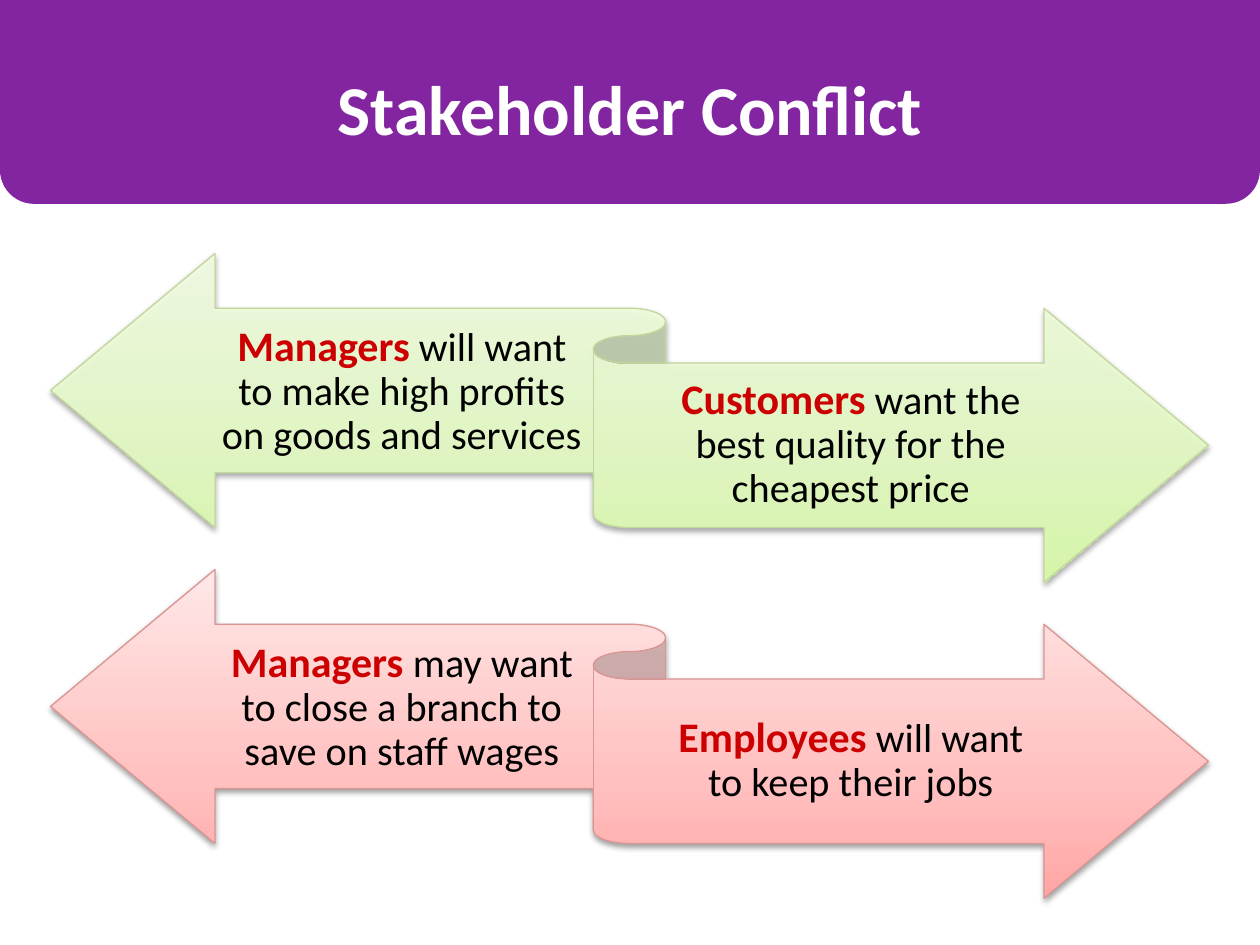
from lxml.etree import SubElement
from pptx import Presentation
from pptx.dml.color import RGBColor
from pptx.enum.shapes import MSO_SHAPE as Shape
from pptx.enum.text import MSO_ANCHOR as Anchor, MSO_AUTO_SIZE as AutoSize, PP_ALIGN as Align
from pptx.oxml.ns import qn
from pptx.util import Cm, Pt

PURPLE, WHITE, RED, BLACK = "8325A1", "FFFFFF", "CC0000", "000000"
GREEN_STOPS = [(0, "DAFDA7"), (35, "E4FCC2"), (100, "F5FFE7")]
PINK_STOPS = [(0, "FFA6A5"), (35, "FFC0BF"), (100, "FFE7E7")]
SLIDE_W, SLIDE_H = 25.4, 19.05


def rgb(color):
    return RGBColor.from_string(color)


def add_color(parent, color, alpha):
    clr = SubElement(parent, qn("a:srgbClr"), val=color)
    if alpha < 100:
        SubElement(clr, qn("a:alpha"), val=str(alpha * 1000))


def add_shape(slide, kind, box):
    s = slide.shapes.add_shape(kind, *map(Cm, box))
    s.shadow.inherit = False
    return s


def add_text(slide, box, runs, frame_format, line_spacing=None):
    """Add a centred paragraph; runs hold text, size, colour and bold."""
    tf = slide.shapes.add_textbox(*map(Cm, box)).text_frame
    for name, value in frame_format.items():
        setattr(tf, name, value)
    p = tf.paragraphs[0]
    p.alignment = Align.CENTER
    p.line_spacing = line_spacing
    for text, size, color, bold in runs:
        r = p.add_run()
        r.text = text
        for name, value in {"name": "Calibri", "size": Pt(size), "bold": bold}.items():
            setattr(r.font, name, value)
        r.font.color.rgb = rgb(color)


def set_gradient(s, stops, alpha):
    """Fill from bottom to top with the given stops."""
    s.fill.gradient()
    s.fill.gradient_angle = 90
    stop_list = s.element.spPr.find(".//" + qn("a:gsLst"))
    stop_list.clear()
    for position, color in stops:
        stop = SubElement(stop_list, qn("a:gs"), pos=str(position * 1000))
        add_color(stop, color, alpha)


def add_soft_shadow(s):
    effects = s.element.spPr.find(qn("a:effectLst"))
    shadow = SubElement(effects, qn("a:outerShdw"), blurRad=str(Pt(3.1)),
                        dist=str(Pt(1.6)), dir="5400000", rotWithShape="0")
    add_color(shadow, BLACK, 38)


def add_header(slide, title):
    for kind, height in ((Shape.ROUNDED_RECTANGLE, 4.11), (Shape.RECTANGLE, 2.92)):
        s = add_shape(slide, kind, (0, 0, SLIDE_W, height))
        s.fill.solid()
        s.fill.fore_color.rgb = rgb(PURPLE)
        s.line.fill.background()
    add_text(slide, (0, 1.19, SLIDE_W, 1.96), [(title, 40, WHITE, True)],
             {"word_wrap": True, "auto_size": AutoSize.SHAPE_TO_FIT_TEXT})


def add_conflict(slide, top, stops, alpha, line_color, left_side, right_side):
    """Add a two-way ribbon with one stakeholder's wish on each side."""
    s = add_shape(slide, Shape.LEFT_RIGHT_RIBBON, (1.02, top, 23.34, 6.63))
    set_gradient(s, stops, alpha)
    s.line.color.rgb = rgb(line_color)
    s.line.width = Pt(0.75)
    add_soft_shadow(s)
    frame_format = {"word_wrap": True, "vertical_anchor": Anchor.MIDDLE,
                    "margin_left": 0, "margin_right": 0,
                    "margin_top": Cm(0.23), "margin_bottom": Cm(0.25)}
    places = ((4.42, 1.17, 7.37), (13.28, 2.24, 7.75))
    for (left, drop, width), (who, wish) in zip(places, (left_side, right_side)):
        runs = [(who, 24, RED, True), (wish, 23, BLACK, False)]
        add_text(slide, (left, top + drop, width, 3.25), runs, frame_format, 0.9)


def main():
    prs = Presentation()
    prs.slide_width, prs.slide_height = Cm(SLIDE_W), Cm(SLIDE_H)
    slide = prs.slides.add_slide(prs.slide_layouts[6])
    add_header(slide, "Stakeholder Conflict")
    add_conflict(slide, 5.11, GREEN_STOPS, 90, "C3D69B",
                 ("Managers", " will want to make high profits on goods and services"),
                 ("Customers", " want the best quality for the cheapest price"))
    add_conflict(slide, 11.48, PINK_STOPS, 100, "D99694",
                 ("Managers ", "may want to close a branch to save on staff wages"),
                 ("Employees", " will want to keep their jobs"))
    prs.save("out.pptx")


if __name__ == "__main__":
    main()
